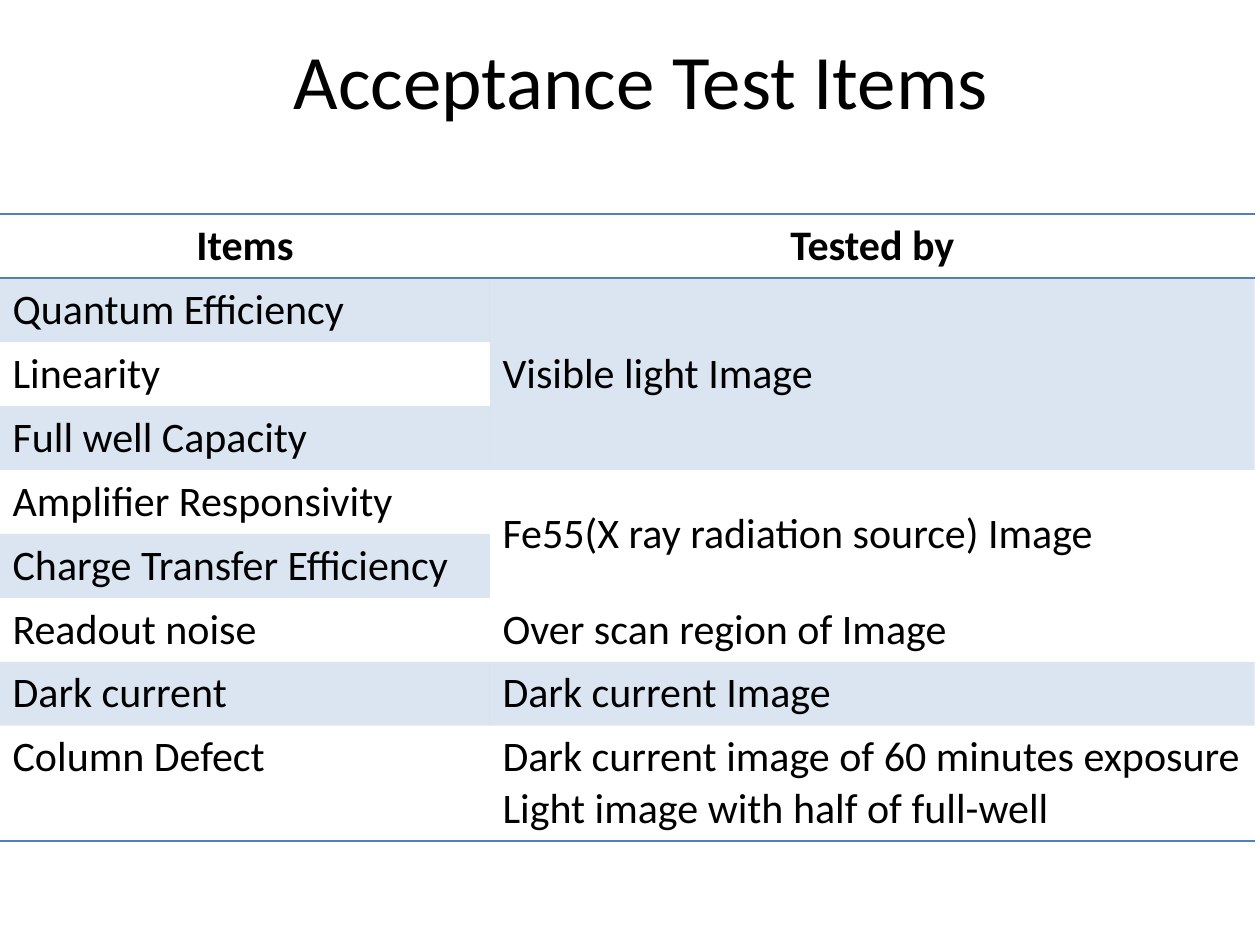
from dataclasses import dataclass
from lxml.etree import SubElement
from pptx import Presentation
from pptx.dml.color import RGBColor as RGB
from pptx.enum.text import MSO_ANCHOR as Anchor, PP_ALIGN as Align
from pptx.oxml.ns import qn
from pptx.util import Pt


@dataclass(frozen=True)
class Theme:
    font: str = "Calibri"
    ink: str = "000000"
    blue: str = "4F81BD"
    tint: int = 20  # band opacity in percent
    head: float = 44
    body: float = 24
    rule: float = 1


THEME = Theme()
NO_GRID = "{2D5ABB26-0587-4C30-8999-92F81FD0307C}"

HEADS = ["Items", "Tested by"]
ITEMS = ["Quantum Efficiency", "Linearity", "Full well Capacity",
         "Amplifier Responsivity", "Charge Transfer Efficiency",
         "Readout noise", "Dark current", "Column Defect"]
BANDS = {1, 3, 5, 7}
# Each test method with the number of items it covers
TESTS = [("Visible light Image", 3),
         ("Fe55(X ray radiation source) Image", 2),
         ("Over scan region of Image", 1),
         ("Dark current Image", 1),
         ("Dark current image of 60 minutes exposure\n"
          "Light image with half of full-well", 1)]


def style(para, size, align=Align.LEFT, bold=False):
    para.alignment = align
    font = para.font
    font.name, font.size, font.bold = THEME.font, Pt(size), bold
    font.color.rgb = RGB.from_string(THEME.ink)


def write(cell, text, **looks):
    cell.text = text
    for para in cell.text_frame.paragraphs:
        style(para, THEME.body, **looks)


def shade(cell):
    cell.fill.solid()
    cell.fill.fore_color.rgb = RGB.from_string(THEME.blue)
    color = cell.fill._xPr.find(qn("a:solidFill"))[0]
    SubElement(color, qn("a:alpha"), val=str(THEME.tint * 1000))


def rule(cell, sides):
    """Draw cell borders; sides are T and B, in that order."""
    props = cell._tc.get_or_add_tcPr()
    for spot, side in enumerate(sides):
        line = SubElement(props, qn(f"a:ln{side}"), w=str(Pt(THEME.rule)))
        fill = SubElement(line, qn("a:solidFill"))
        SubElement(fill, qn("a:srgbClr"), val=THEME.blue)
        props.insert(spot, line)  # borders come before the fill


def add_title(slide, left, top, width, height):
    title = slide.shapes.title
    title.left, title.top = Pt(left), Pt(top)
    title.width, title.height = Pt(width), Pt(height)
    frame = title.text_frame
    frame.text = "Acceptance Test Items"
    frame.vertical_anchor = Anchor.MIDDLE
    style(frame.paragraphs[0], THEME.head, Align.CENTER)


def add_tests(slide, left, top, width, height):
    count = len(ITEMS) + 1
    frame = slide.shapes.add_table(count, 2, Pt(left), Pt(top),
                                   Pt(width), Pt(height))
    table = frame.table
    table._tbl.tblPr.find(qn("a:tableStyleId")).text = NO_GRID
    table.first_row = table.horz_banding = False

    # Sizes: the last row holds one more line of text
    first = 280
    table.columns[0].width = Pt(first)
    table.columns[1].width = Pt(width - first)
    extra = 29.2
    for row in table.rows:
        row.height = Pt((height - extra) / count)
    table.rows[count - 1].height += Pt(extra)

    # Text
    for col, text in enumerate(HEADS):
        write(table.cell(0, col), text, align=Align.CENTER, bold=True)
    for row, text in enumerate(ITEMS, 1):
        write(table.cell(row, 0), text)
    row = 1
    for text, span in TESTS:
        cell = table.cell(row, 1)
        if span > 1:
            cell.merge(table.cell(row + span - 1, 1))
            cell.vertical_anchor = Anchor.MIDDLE
        write(cell, text)
        row += span

    # Bands and rules
    for row in range(count):
        for col in range(2):
            cell = table.cell(row, col)
            if row in BANDS and not (cell.is_spanned and row == 5):
                shade(cell)
            else:
                cell.fill.background()
            if row == 0:
                rule(cell, "TB")
            elif row == count - 1:
                rule(cell, "B")


def main():
    deck = Presentation()
    deck.slide_width, deck.slide_height = Pt(720), Pt(540)
    slide = deck.slides.add_slide(deck.slide_layouts[5])
    add_title(slide, 42.5, 0, 648, 90)
    add_tests(slide, 0, 122.4, 717, 358.2)
    deck.save("out.pptx")


if __name__ == "__main__":
    main()
